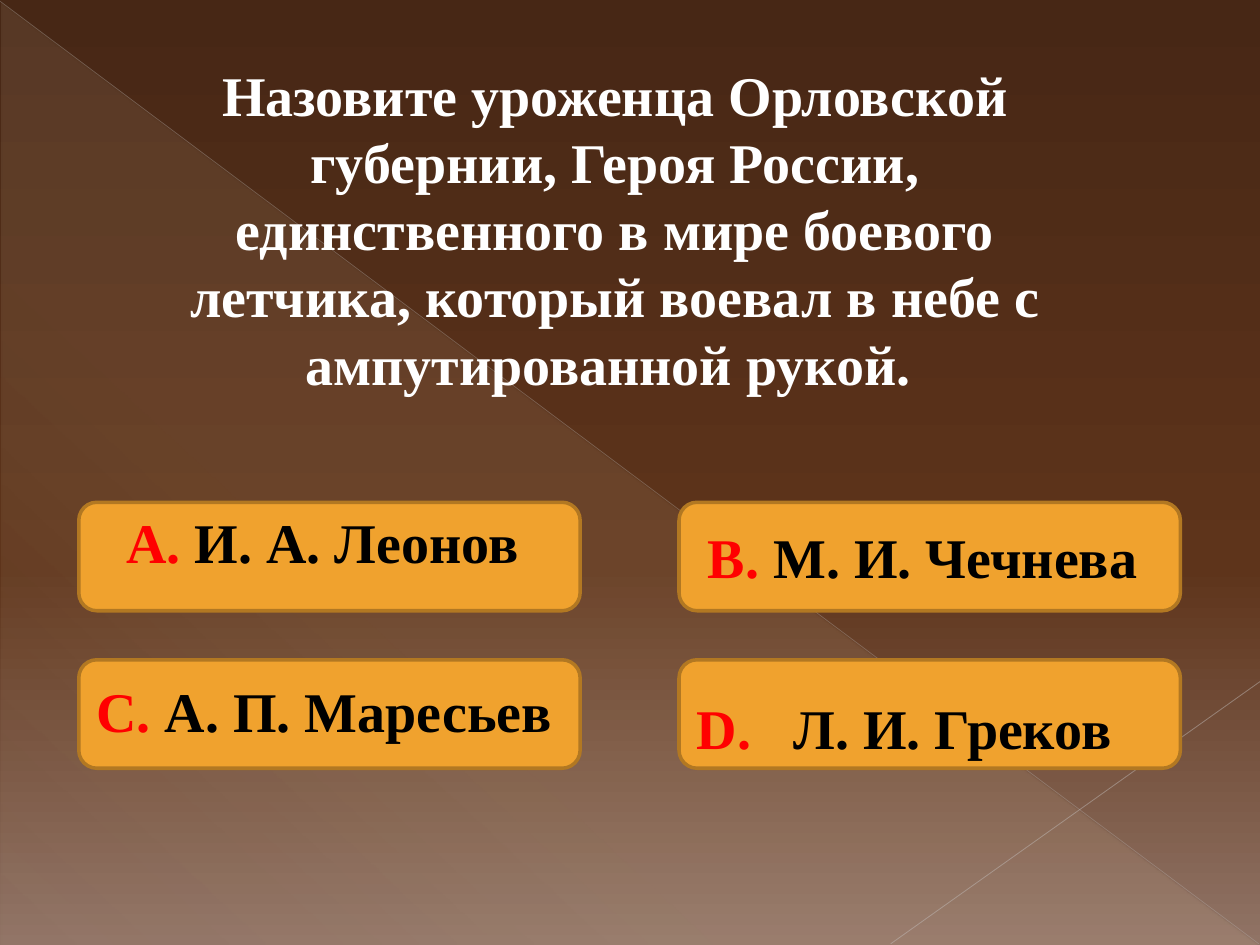
from dataclasses import dataclass

import pptx
import pptx.dml.color
import pptx.enum.shapes
import pptx.enum.text
import pptx.oxml.ns
import pptx.oxml.xmlchemy
import pptx.util
from lxml import etree

Pt = pptx.util.Pt
qn = pptx.oxml.ns.qn
RGB = pptx.dml.color.RGBColor.from_string
ANCHOR = pptx.enum.text.MSO_ANCHOR
ALIGN = pptx.enum.text.PP_ALIGN
SHAPE = pptx.enum.shapes.MSO_SHAPE


@dataclass(frozen=True)
class Theme:
    font: str = "Times New Roman"
    size: float = 32
    leading: float = 38.4
    question: str = "FFFFFF"
    letter: str = "FF0000"
    answer: str = "000000"
    button: str = "F0A22E"
    border: str = "B27822"
    backdrop: tuple = ((0, "472715", 100), (60, "5E341B", 100), (100, "907365", 100))
    glow: tuple = ((0, "FBEEC9", 10), (70, "FBEEC9", 8), (100, "FBEEC9", 1))


THEME = Theme()


def set_alpha(clr, percent):
    etree.SubElement(clr, qn("a:alpha")).set("val", str(percent * 1000))


def set_gradient(fill, element, stops, angle):
    fill.gradient()
    fill.gradient_angle = 360 - angle
    gs_list = next(element.iter(qn("a:gsLst")))
    for gs in list(gs_list):
        gs_list.remove(gs)
    for pos, color, opacity in stops:
        gs = etree.SubElement(gs_list, qn("a:gs"), pos=str(pos * 1000))
        clr = etree.SubElement(gs, qn("a:srgbClr"), val=color)
        if opacity < 100:
            set_alpha(clr, opacity)


def add_run(p, text, color):
    r = p.add_run()
    r.text = text
    r.font.name = THEME.font
    r.font.size = Pt(THEME.size)
    r.font.bold = True
    r.font.color.rgb = RGB(color)


def add_triangle(s):
    sp = s.shapes.add_shape(SHAPE.RIGHT_TRIANGLE, Pt(0.7), Pt(1.4), Pt(718.6), Pt(538.6))
    sp.shadow.inherit = False
    sp.line.fill.background()
    set_gradient(sp.fill, sp.element, THEME.glow, 133)


def add_line(s, start, end, color, width, opacity):
    points = [Pt(v) for v in (*start, *end)]
    cxn = s.shapes.add_connector(pptx.enum.shapes.MSO_CONNECTOR.STRAIGHT, *points)
    cxn.line.color.rgb = RGB(color)
    cxn.line.width = Pt(width)
    sp_pr = cxn.element.spPr
    set_alpha(next(sp_pr.iter(qn("a:srgbClr"))), opacity)
    etree.SubElement(sp_pr, qn("a:effectLst"))


def add_answer(s, left, top, letter, name, align, anchor, insets, tab=None):
    sp = s.shapes.add_shape(SHAPE.FLOWCHART_ALTERNATE_PROCESS,
                            Pt(left), Pt(top), Pt(286.5), Pt(62))
    sp.shadow.inherit = False
    sp.fill.solid()
    sp.fill.fore_color.rgb = RGB(THEME.button)
    sp.line.color.rgb = RGB(THEME.border)
    sp.line.width = Pt(2)
    tf = sp.text_frame
    tf.word_wrap = True
    tf.vertical_anchor = anchor
    tf.margin_top, tf.margin_bottom = (Pt(v) for v in insets)
    p = tf.paragraphs[0]
    p.alignment = align
    if tab:
        tabs = etree.SubElement(p._p.get_or_add_pPr(), qn("a:tabLst"))
        etree.SubElement(tabs, qn("a:tab"), pos=str(Pt(tab)), algn="l")
    add_run(p, letter, THEME.letter)
    add_run(p, name, THEME.answer)


def add_question(s, text):
    sp = s.shapes.title
    sp.left, sp.top, sp.width, sp.height = Pt(67.5), Pt(28), Pt(568), Pt(223)
    sp.element.getparent().append(sp.element)
    tf = sp.text_frame
    tf.word_wrap = True
    tf.auto_size = pptx.enum.text.MSO_AUTO_SIZE.NONE
    tf.vertical_anchor = ANCHOR.TOP
    tf.margin_top = Pt(6.4)
    p = tf.paragraphs[0]
    p.alignment = ALIGN.CENTER
    p.line_spacing = Pt(THEME.leading)
    add_run(p, text, THEME.question)


def main():
    prs = pptx.Presentation()
    prs.slide_width, prs.slide_height = Pt(720), Pt(540)
    s = prs.slides.add_slide(prs.slide_layouts[5])
    set_gradient(s.background.fill, s.element, THEME.backdrop, 90)

    add_triangle(s)
    add_line(s, (0, 0.7), (719.3, 539.3), "BCB7B4", 0.39, 35)
    add_line(s, (720, 389.5), (509, 539.3), "C4BFBD", 0.47, 45)

    left, right = 45, 388
    upper, lower = 287, 377
    add_answer(s, left, upper, "А. ", "И. А. Леонов ", ALIGN.CENTER, ANCHOR.TOP, (0, 0))
    add_answer(s, left, lower, "С. ", "А. П. Маресьев", ALIGN.LEFT, ANCHOR.MIDDLE, (0, 4))
    add_answer(s, right, upper, "В. ", "М. И. Чечнева ", ALIGN.CENTER, ANCHOR.MIDDLE, (0, 0))
    add_answer(s, right, lower, "D.\t", "Л. И. Греков", ALIGN.LEFT, ANCHOR.BOTTOM, (0, 1), 55.4)

    add_question(s, "Назовите уроженца Орловской губернии, Героя России, единственного "
                    "в мире боевого летчика, который воевал в небе с ампутированной рукой. ")
    prs.save("out.pptx")


if __name__ == "__main__":
    main()
